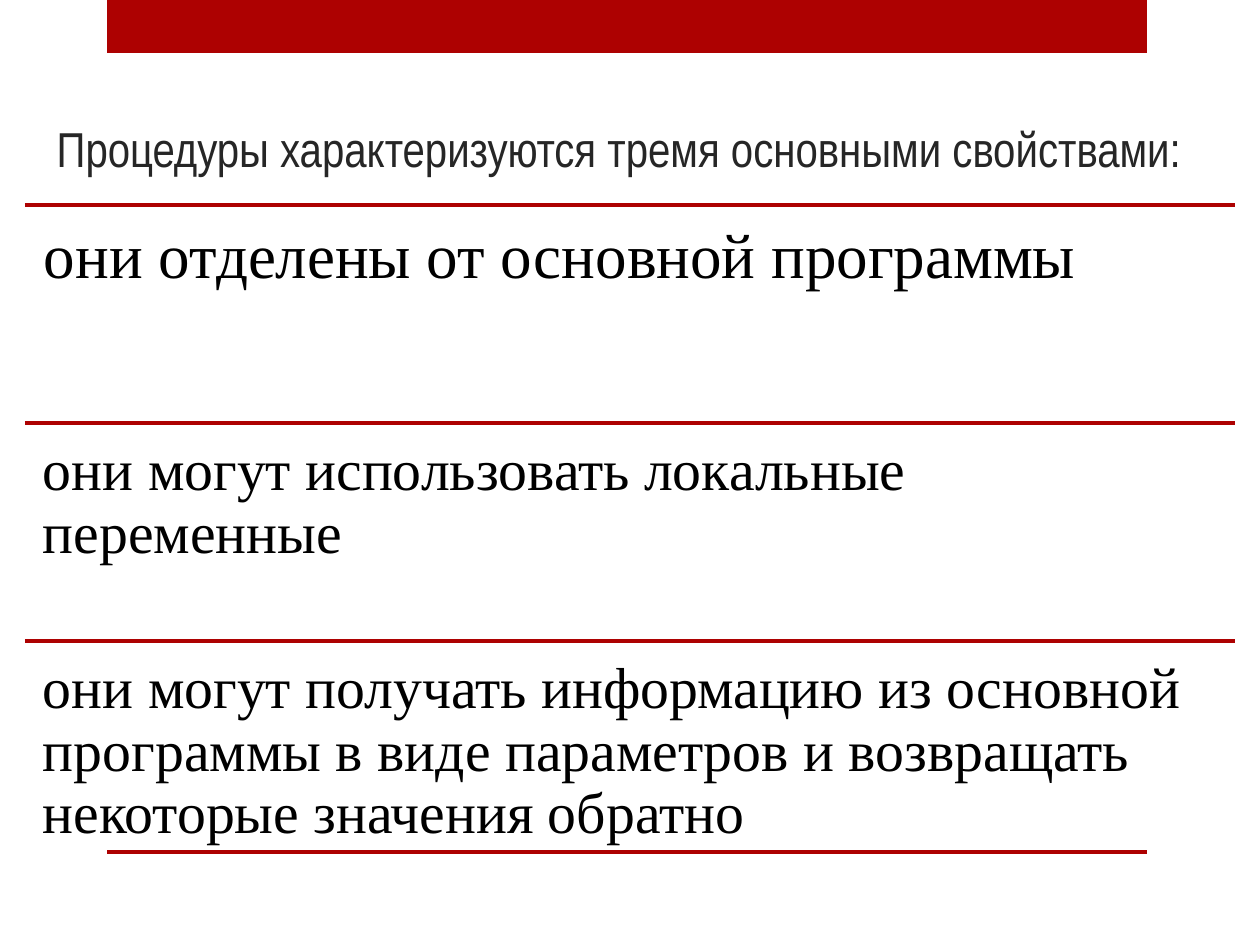
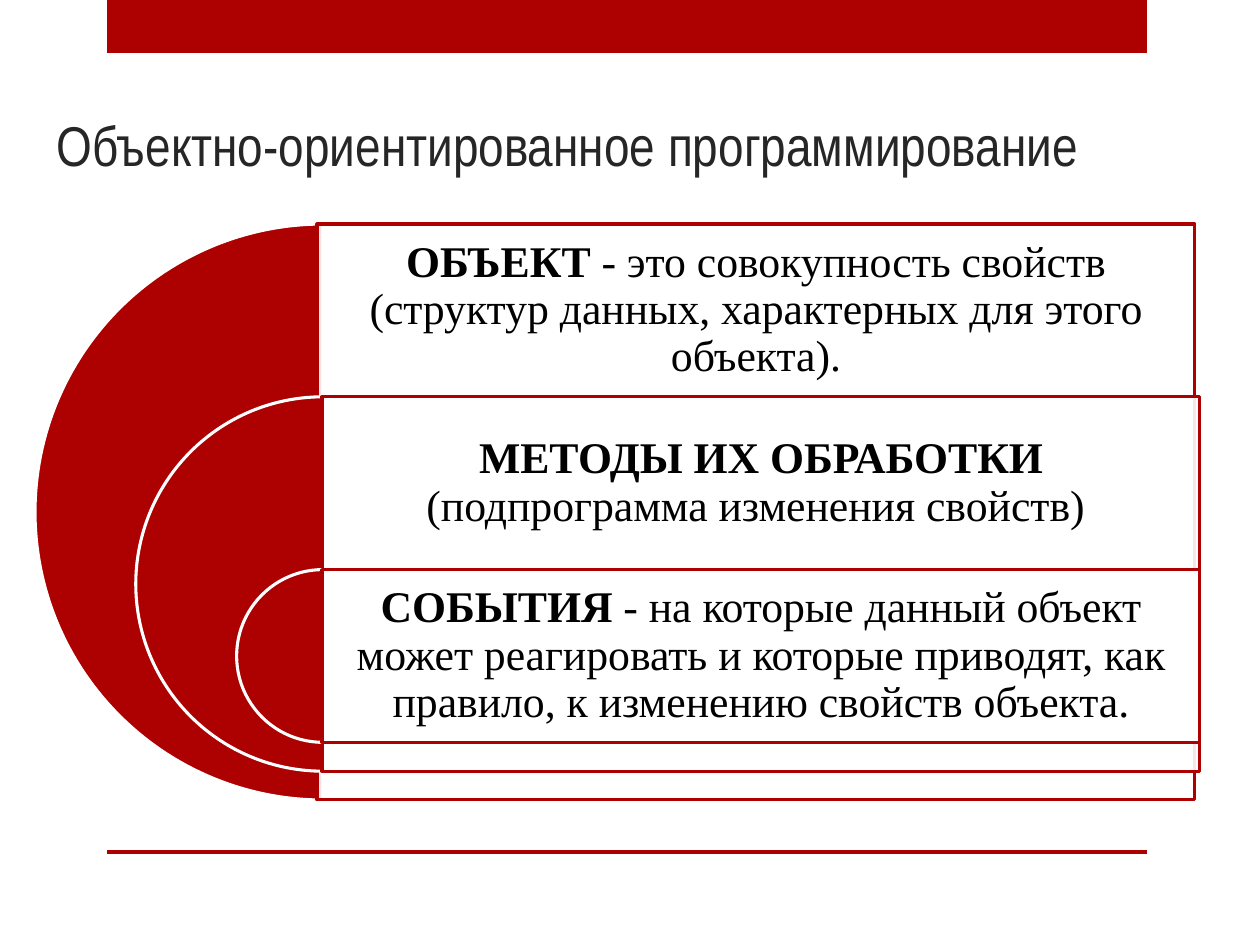
from lxml import etree
from pptx import Presentation
from pptx.dml.color import RGBColor
from pptx.enum import shapes, text
from pptx.oxml import ns
from pptx.util import Emu, Pt

PX = 914400 / 126
RED = RGBColor(0xAD, 0x01, 0x01)
WHITE = RGBColor(0xFF, 0xFF, 0xFF)
BLACK = RGBColor(0, 0, 0)
TITLE_GREY = RGBColor(0x26, 0x26, 0x26)
TITLE_FONT = "Arial Narrow"
BODY_FONT = "Times New Roman"
RULE_WIDTH = Pt(1.75)
TITLE_BOX = (44, 45, 1181, 139)
BANDS = [(107, 0, 1040, 53), (107, 850, 1040, 4)]

# Statement, text size, inset
PROPERTIES = [
    ("они отделены от основной программы", 36, 19),
    ("они могут использовать локальные переменные", 33, 18),
    ("они могут получать информацию из основной программы в виде параметров "
     "и возвращать некоторые значения обратно", 33, 18),
]
# Term, explanation, left edge of its panel
CONCEPTS = [
    ("ОБЪЕКТ", " - это совокупность свойств (структур данных, характерных "
     "для этого объекта).", 317),
    ("МЕТОДЫ ИХ ОБРАБОТКИ ", "(подпрограмма изменения свойств) ", 322),
    ("СОБЫТИЯ ", "- на которые данный объект может реагировать и которые "
     "приводят, как правило, к изменению свойств объекта.", 322),
]


def px(*lengths):
    return [Emu(round(length * PX)) for length in lengths]


def add_block(slide, kind, box, fill, outline=None):
    block = slide.shapes.add_shape(kind, *px(*box))
    block.shadow.inherit = False
    block.fill.solid()
    block.fill.fore_color.rgb = fill
    if outline is None:
        block.line.fill.background()
    else:
        block.line.color.rgb = outline
        block.line.width = RULE_WIDTH
    return block


def add_rule(slide, left, top, width):
    rule = slide.shapes.add_connector(
        shapes.MSO_CONNECTOR.STRAIGHT, *px(left, top, left + width, top))
    rule.line.color.rgb = RED
    rule.line.width = RULE_WIDTH
    etree.SubElement(rule._element.spPr, ns.qn("a:effectLst"))


def add_statement(slide, box, parts, size, inset, anchor, align):
    """Write (wording, bold) parts as one paragraph."""
    frame = slide.shapes.add_textbox(*px(*box)).text_frame
    frame.word_wrap = True
    frame.vertical_anchor = anchor
    frame.margin_left, frame.margin_top, frame.margin_right, frame.margin_bottom = px(*[inset] * 4)
    statement = frame.paragraphs[0]
    statement.alignment = align
    statement.line_spacing = 0.9
    statement.font.size = Pt(size)
    statement.font.name = BODY_FONT
    statement.font.color.rgb = BLACK
    for wording, bold in parts:
        run = statement.add_run()
        run.text = wording
        if bold:
            run.font.bold = True


def add_page(deck, heading, size):
    """Title-only slide with the red bands and the shared title style."""
    slide = deck.slides.add_slide(deck.slide_layouts[5])
    for band in BANDS:
        add_block(slide, shapes.MSO_SHAPE.RECTANGLE, band, RED)
    title = slide.shapes.title
    title.left, title.top, title.width, title.height = px(*TITLE_BOX)
    frame = title.text_frame
    frame.text = heading
    frame.auto_size = text.MSO_AUTO_SIZE.NONE
    frame.vertical_anchor = text.MSO_ANCHOR.BOTTOM
    line = frame.paragraphs[0]
    line.alignment = text.PP_ALIGN.LEFT
    line.font.size = Pt(size)
    line.font.name = TITLE_FONT
    line.font.color.rgb = TITLE_GREY
    return slide


def add_property_list(slide, box):
    """Equal rows, each under a red rule."""
    left, top, width, height = box
    row = height / len(PROPERTIES)
    for i, (wording, size, inset) in enumerate(PROPERTIES):
        row_top = top + i * row
        add_rule(slide, left, row_top, width)
        add_statement(slide, (left, row_top, width, row), [(wording, False)],
                      size, inset, text.MSO_ANCHOR.TOP, text.PP_ALIGN.LEFT)


def add_nested_concepts(slide, box):
    """Half discs nested in one another, each with a panel on its right."""
    left, top, width, height = box
    centre = left + height / 2
    step = height * 0.3
    for i, (term, explanation, panel_left) in enumerate(CONCEPTS):
        diameter = height * (1 - 0.35 * i)
        level_top = top + i * step
        half_disc = add_block(
            slide, shapes.MSO_SHAPE.PIE,
            (centre - diameter / 2, level_top, diameter, diameter), RED, WHITE)
        half_disc.adjustments[0] = 54
        half_disc.adjustments[1] = 162

        panel = add_block(slide, shapes.MSO_SHAPE.RECTANGLE,
                          (panel_left, level_top, width, diameter), WHITE, RED)
        tint = panel._element.spPr.find(ns.qn("a:solidFill"))[0]
        etree.SubElement(tint, ns.qn("a:alpha"), val="90000")
        add_statement(slide, (panel_left, level_top, width, step),
                      [(term, True), (explanation, False)], 25, 12,
                      text.MSO_ANCHOR.MIDDLE, text.PP_ALIGN.CENTER)


def main():
    deck = Presentation()
    deck.slide_width, deck.slide_height = px(1260, 945)

    procedures = add_page(
        deck, "Процедуры характеризуются тремя основными свойствами:", 28)
    add_property_list(procedures, (25, 205, 1210, 654))

    objects = add_page(deck, "Объектно-ориентированное программирование", 32)
    add_nested_concepts(objects, (35, 224, 878, 576))

    deck.save("out.pptx")


if __name__ == "__main__":
    main()
